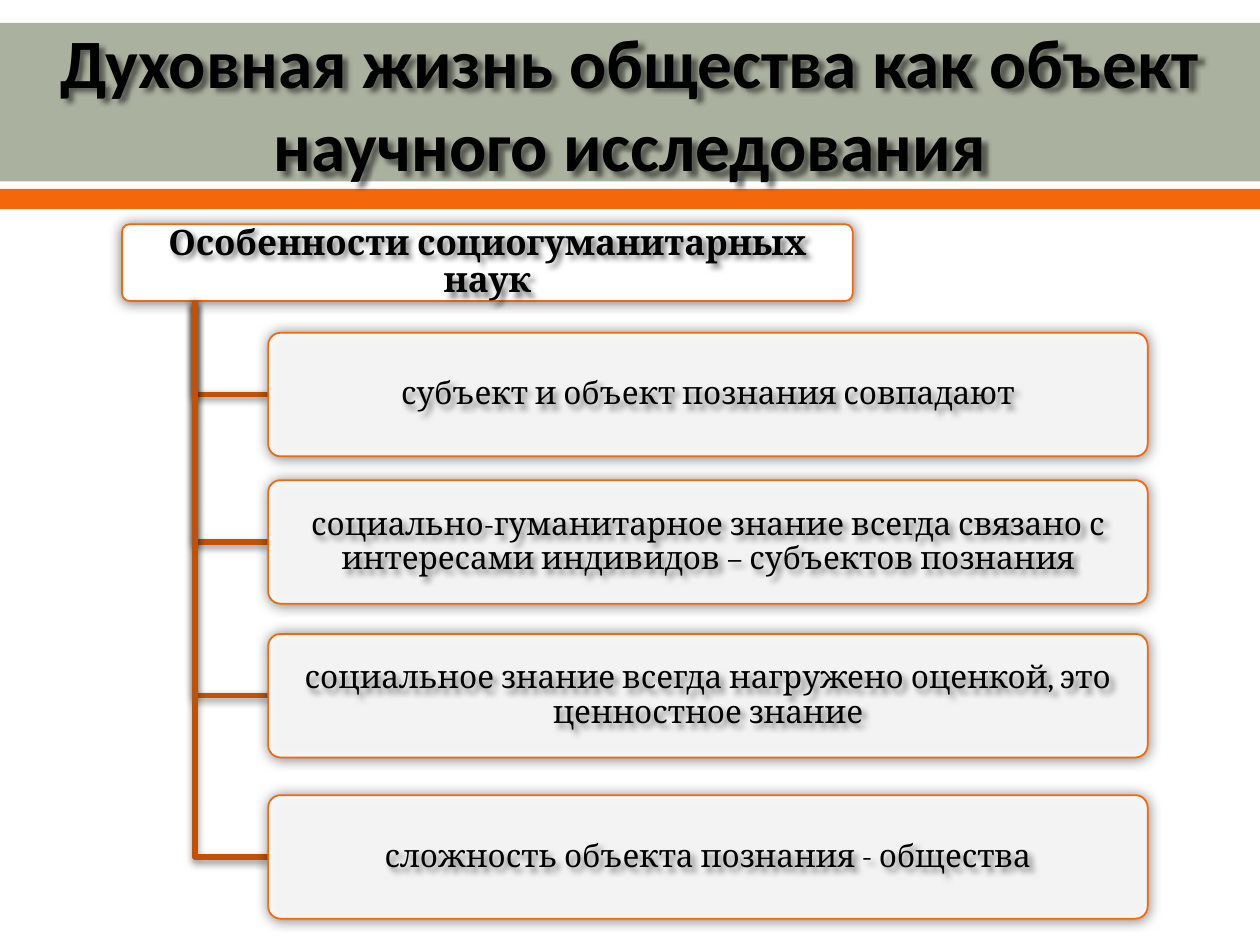
from lxml.etree import SubElement as Sub
from pptx import Presentation
from pptx.dml.color import RGBColor
from pptx.enum.shapes import MSO_SHAPE as Geo
from pptx.enum.text import MSO_ANCHOR as Anchor, MSO_AUTO_SIZE as Fit, PP_ALIGN as Align
from pptx.oxml.ns import qn
from pptx.util import Cm, Pt

ORANGE, RUST, SAGE, WHITE, BLACK = "F4680B", "C15205", "ABB19F", "FFFFFF", "000000"
CARD = dict(blur=7.5, dist=0, turn=0)
ELBOW = dict(blur=4.5, dist=1.5, turn=90)
LABEL = dict(blur=3, dist=3, turn=45)
HEAD = "Особенности социогуманитарных наук"
# Card text and its top edge within the tree
ITEMS = [
    ("субъект и объект познания совпадают", 2.19),
    ("социально-гуманитарное знание всегда связано с интересами индивидов – субъектов познания", 5.16),
    ("социальное знание всегда нагружено оценкой, это ценностное знание", 8.26),
    ("сложность объекта познания - общества", 11.51),
]


def tint(fmt, color):
    fmt.solid()
    fmt.fore_color.rgb = RGBColor.from_string(color)


def shade(shape, blur, dist, turn):
    """Give a shape a soft black shadow at half strength."""
    shape.shadow.inherit = False
    glow = Sub(shape._element.spPr.find(qn("a:effectLst")), qn("a:outerShdw"),
               blurRad=str(Pt(blur)), dist=str(Pt(dist)), dir=str(turn * 60000),
               algn="ctr", rotWithShape="0")
    ink = Sub(glow, qn("a:srgbClr"), val=BLACK)
    Sub(ink, qn("a:alpha"), val="50000")


def write(shape, text, name, size, bold, pad, gap=1.0):
    frame = shape.text_frame
    frame.text = text
    side, edge = pad
    look = dict(word_wrap=True, auto_size=Fit.NONE, vertical_anchor=Anchor.MIDDLE,
                margin_left=Cm(side), margin_right=Cm(side),
                margin_top=Cm(edge), margin_bottom=Cm(edge))
    for key, val in look.items():
        setattr(frame, key, val)
    line = frame.paragraphs[0]
    line.alignment, line.line_spacing = Align.CENTER, gap
    font = line.runs[0].font
    for key, val in dict(name=name, size=Pt(size), bold=bold).items():
        setattr(font, key, val)
    tint(font.fill, BLACK)
    shade(shape, **LABEL)


def band(slide, top, high, color):
    bar = slide.shapes.add_shape(Geo.RECTANGLE, 0, Cm(top), Cm(25.4), Cm(high))
    bar.shadow.inherit = False
    tint(bar.fill, color)
    bar.line.fill.background()


def header(slide, left, top, wide, high):
    band(slide, top, high, SAGE)
    band(slide, top + high + 0.15, 0.41, ORANGE)
    # The title goes in front of the bands
    title = slide.shapes.title
    slide.shapes._spTree.append(title._element)
    title.left, title.top, title.width, title.height = map(
        Cm, (left, top + 0.05, wide, high - 0.1))
    write(title, "Духовная жизнь общества как объект научного исследования",
          "Calibri", 39.6, True, (0.25, 0.13))


def card(slide, left, top, wide, high, text, size, bold=False, alpha=None):
    box = slide.shapes.add_shape(
        Geo.ROUNDED_RECTANGLE, *map(Cm, (left, top, wide, high)))
    box.adjustments[0] = 0.1
    tint(box.fill, WHITE)
    if alpha:
        ink = box._element.spPr.find(qn("a:solidFill"))[0]
        Sub(ink, qn("a:alpha"), val=str(alpha * 1000))
    tint(box.line.fill, ORANGE)
    box.line.width = Pt(1)
    shade(box, **CARD)
    # Label inside the rounded corners
    pad = 0.03 * high
    label = slide.shapes.add_textbox(
        *map(Cm, (left + pad, top + pad, wide - 2 * pad, high - 2 * pad)))
    write(label, text, "Cambria", size, bold, (0.1, 0.06), 0.9)


def elbow(slide, left, top, right, end):
    pen = slide.shapes.build_freeform(Cm(left), Cm(top))
    pen.add_line_segments([(Cm(left), Cm(end)), (Cm(right), Cm(end))], close=False)
    shape = pen.convert_to_shape()
    shape.fill.background()
    tint(shape.line.fill, RUST)
    shape.line.width = Pt(3)
    shade(shape, **ELBOW)


def tree(slide, left, top, wide, high):
    card(slide, left, top, wide, high, HEAD, 20, bold=True)
    # Children hang from a stem at a tenth of the head's width
    stem, edge, tall = left + wide / 10, left + wide / 5, 2.49
    for text, drop in ITEMS:
        elbow(slide, stem, top + high, edge, top + drop + tall / 2)
        card(slide, edge, top + drop, 17.73, tall, text, 18, alpha=90)


def main():
    deck = Presentation()
    deck.slide_width, deck.slide_height = Cm(25.4), Cm(19.05)
    slide = deck.slides.add_slide(deck.slide_layouts[5])
    header(slide, 0, 0.46, 25.4, 3.2)
    tree(slide, 2.46, 4.52, 14.73, 1.55)
    deck.save("out.pptx")


if __name__ == "__main__":
    main()
